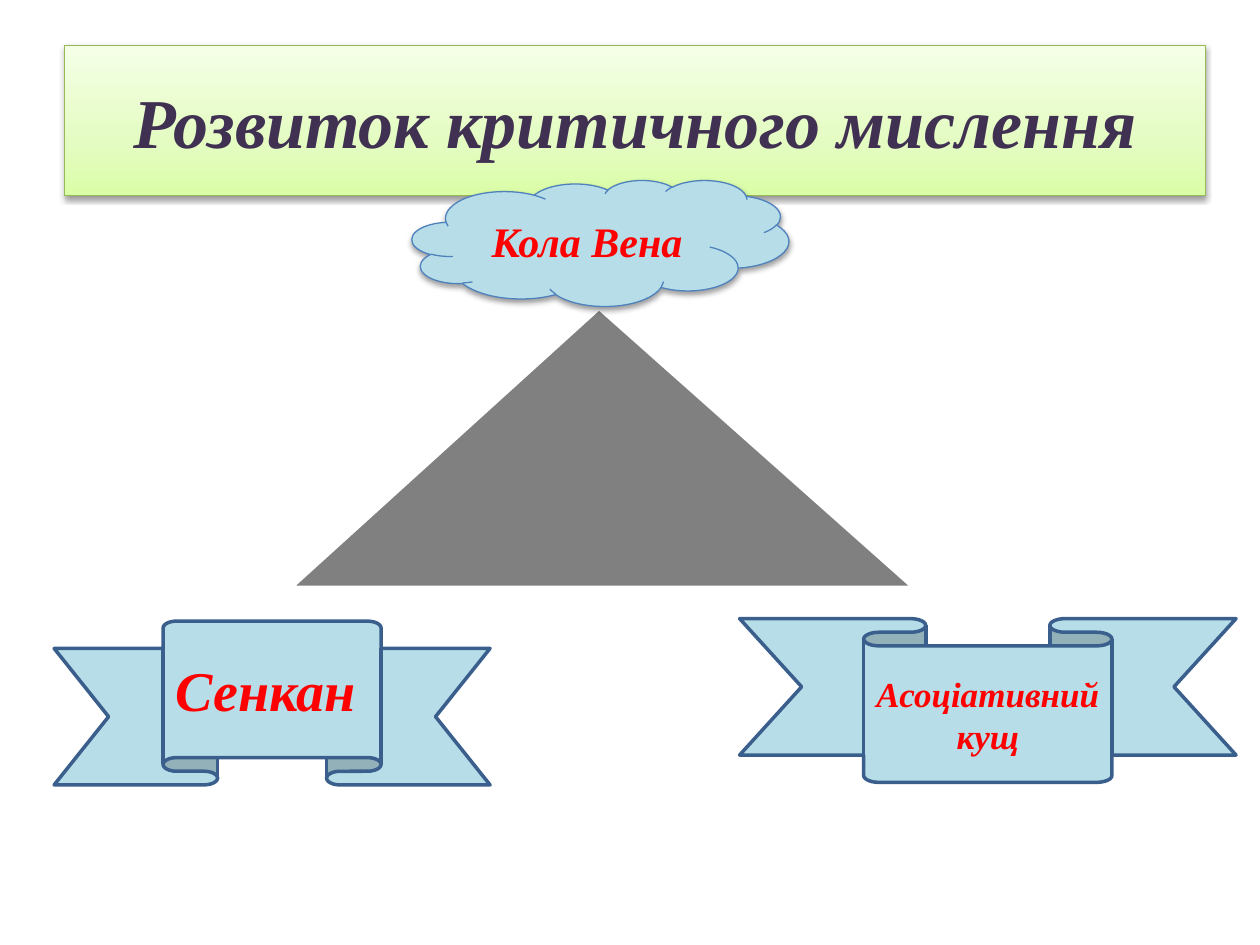
"""Build a slide on critical thinking: a title, a triangle and three methods."""
import copy

import pptx
import pptx.dml.color
import pptx.enum.shapes
import pptx.enum.text
import pptx.oxml
import pptx.oxml.ns
import pptx.util

Inches = pptx.util.Inches
RGBColor = pptx.dml.color.RGBColor
SHAPES = pptx.enum.shapes.MSO_SHAPE
ALIGN = pptx.enum.text.PP_ALIGN

FONT = "Times New Roman"
PURPLE = RGBColor(0x40, 0x31, 0x52)
RED = RGBColor(0xFF, 0x00, 0x00)
WHITE = RGBColor(0xFF, 0xFF, 0xFF)
GRAY = RGBColor(0x80, 0x80, 0x80)
PALE_BLUE = RGBColor(0xB7, 0xDE, 0xE8)
BLUE = RGBColor(0x4F, 0x81, 0xBD)
DARK_BLUE = RGBColor(0x3A, 0x5F, 0x8C)
GREEN = RGBColor(0x98, 0xB9, 0x55)
TITLE_GRADIENT = (
    (0, RGBColor(0xDA, 0xFD, 0xA7)),
    (0.35, RGBColor(0xE4, 0xFC, 0xC2)),
    (1, RGBColor(0xF5, 0xFF, 0xE7)),
)


def set_line(shape, color, width):
    """Set the outline colour and its width in points."""
    shape.line.color.rgb = color
    shape.line.width = pptx.util.Pt(width)


def set_text(shape, text, size, color, alignment=ALIGN.CENTER):
    """Write one bold italic paragraph in the middle of a shape."""
    text_frame = shape.text_frame
    text_frame.text = text
    text_frame.word_wrap = True
    text_frame.auto_size = pptx.enum.text.MSO_AUTO_SIZE.NONE
    text_frame.vertical_anchor = pptx.enum.text.MSO_ANCHOR.MIDDLE
    paragraph = text_frame.paragraphs[0]
    paragraph.alignment = alignment
    font = paragraph.runs[0].font
    font.name = FONT
    font.size = pptx.util.Pt(size)
    font.bold = font.italic = True
    font.color.rgb = color


def add_shadow(shape):
    """Give a shape a soft shadow that falls straight down."""
    shape.shadow.inherit = False
    effects = shape._element.spPr.find(pptx.oxml.ns.qn("a:effectLst"))
    effects.append(pptx.oxml.parse_xml(
        f'<a:outerShdw {pptx.oxml.ns.nsdecls("a")} blurRad="40000" dist="20000"'
        ' dir="5400000" rotWithShape="0"><a:srgbClr val="000000">'
        '<a:alpha val="38000"/></a:srgbClr></a:outerShdw>'))


def set_gradient(shape, colors):
    """Fill a shape with colour stops that run from bottom to top."""
    shape.fill.gradient()
    shape.fill.gradient_angle = 90
    stop_list = shape._element.spPr.find(".//" + pptx.oxml.ns.qn("a:gsLst"))
    while len(stop_list) < len(colors):
        stop_list.append(copy.deepcopy(stop_list[0]))
    for stop, (position, color) in zip(shape.fill.gradient_stops, colors):
        stop.position = position
        stop.color.rgb = color


def format_title(title, text):
    """Turn the title placeholder into a rounded gradient banner."""
    title.left, title.top = Inches(0.51), Inches(0.36)
    title.width, title.height = Inches(9.06), Inches(1.19)
    title._element.spPr.append(pptx.oxml.parse_xml(
        f'<a:prstGeom {pptx.oxml.ns.nsdecls("a")} prst="roundRect"><a:avLst/></a:prstGeom>'))
    set_gradient(title, TITLE_GRADIENT)
    set_line(title, GREEN, 0.75)
    add_shadow(title)
    set_text(title, text, 40, PURPLE)


def add_shape(slide, kind, box, fill, line, line_width):
    """Add a preset shape with a plain fill and no shadow."""
    shape = slide.shapes.add_shape(kind, *map(Inches, box))
    shape.shadow.inherit = False
    shape.fill.solid()
    shape.fill.fore_color.rgb = fill
    set_line(shape, line, line_width)
    return shape


def add_ribbon(slide, kind, box, text, size, alignment):
    """Add a ribbon that names a method."""
    ribbon = add_shape(slide, kind, box, PALE_BLUE, DARK_BLUE, 2)
    set_text(ribbon, text, size, RED, alignment)


def main():
    """Build and save the slide."""
    presentation = pptx.Presentation()
    presentation.slide_width, presentation.slide_height = Inches(10), Inches(7.5)
    slide = presentation.slides.add_slide(presentation.slide_layouts.get_by_name("Title Only"))

    format_title(slide.shapes.title, "Розвиток критичного мислення")
    triangle = add_shape(slide, SHAPES.ISOSCELES_TRIANGLE, (2.24, 2.41, 5.08, 2.28),
                         GRAY, WHITE, 6)
    triangle.adjustments[0] = 0.495
    cloud = add_shape(slide, SHAPES.CLOUD, (3.27, 1.43, 2.99, 1), PALE_BLUE, BLUE, 0.75)
    add_shadow(cloud)
    set_text(cloud, "Кола Вена", 24, RED)
    add_ribbon(slide, SHAPES.UP_RIBBON, (0.43, 4.93, 3.46, 1.3),
               "Сенкан", 32, ALIGN.LEFT)
    add_ribbon(slide, SHAPES.DOWN_RIBBON, (5.87, 4.91, 3.94, 1.3),
               "Асоціативний кущ", 20, ALIGN.CENTER)
    presentation.save("out.pptx")


if __name__ == "__main__":
    main()
